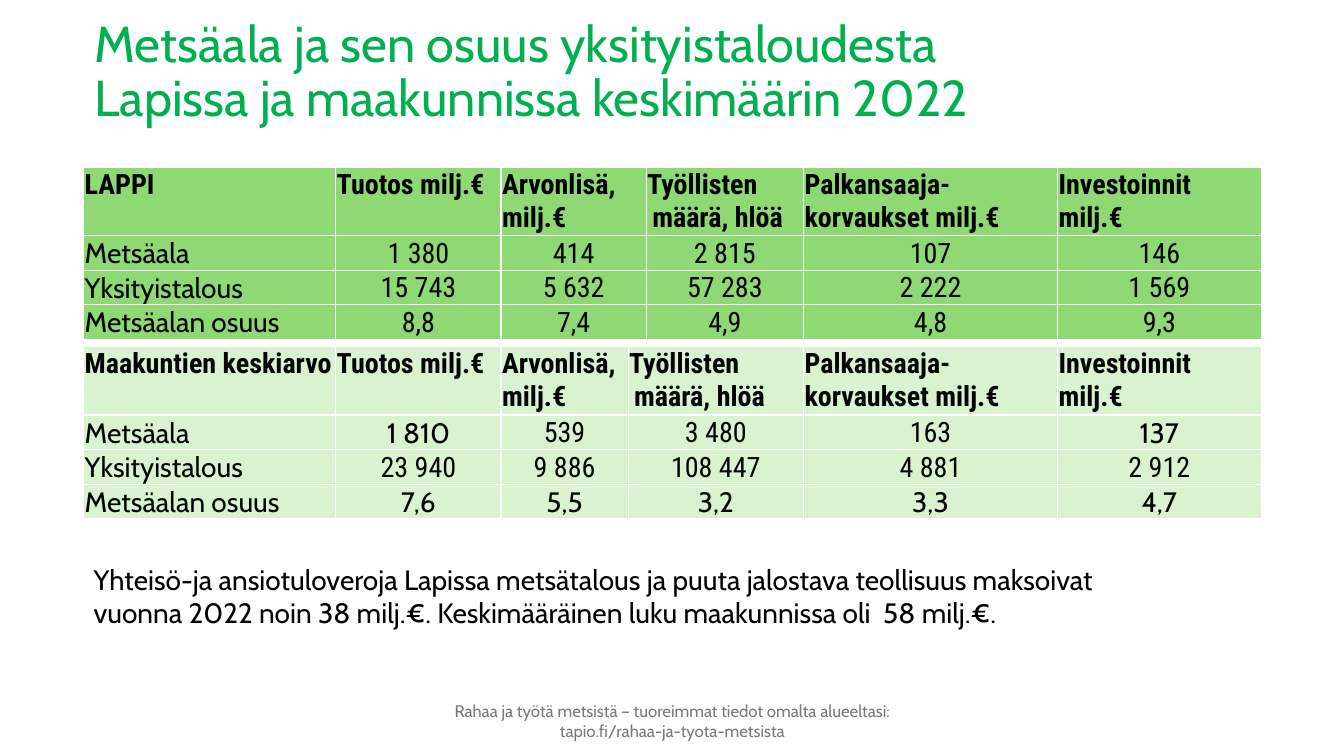
from dataclasses import dataclass

from lxml.etree import SubElement
from pptx import Presentation
from pptx.dml.color import RGBColor
from pptx.enum.text import MSO_ANCHOR, PP_ALIGN
from pptx.oxml.ns import qn
from pptx.slide import Slide
from pptx.table import _Cell
from pptx.text.text import TextFrame
from pptx.util import Emu, Pt


@dataclass(frozen=True)
class Theme:
    green: str = "00B050"
    lapland_fill: str = "8ED973"
    average_fill: str = "D9F2D0"
    border: str = "FFFFFF"
    ink: str = "000000"
    muted: str = "797979"
    body_font: str = "Cabin"
    figure_font: str = "Roboto Condensed"
    title_size: int = 36
    body_size: int = 20
    footer_size: int = 12


@dataclass(frozen=True)
class TextBlock:
    text: str
    left: int
    top: int
    width: int
    height: int
    size: int
    color: str
    align: PP_ALIGN = PP_ALIGN.LEFT
    anchor: MSO_ANCHOR = MSO_ANCHOR.MIDDLE
    line_spacing: float | None = None


@dataclass(frozen=True)
class RegionTable:
    region: str
    top: int
    fill: str
    column_widths: tuple[int, ...]
    figures: tuple[tuple[str, ...], ...]
    body_font_cells: frozenset[tuple[int, int]] = frozenset()


THEME = Theme()
EMU_PER_PX = 9144
TABLE_LEFT = 83
HEADER_HEIGHT = 65
ROW_HEIGHT = 34
HEADER_INDENT = 5
HEADINGS = (
    "Tuotos milj.€",
    "Arvonlisä, milj.€",
    "Työllisten\nmäärä, hlöä",
    "Palkansaaja-korvaukset milj.€",
    "Investoinnit\nmilj.€",
)
ROW_LABELS = ("Metsäala", "Yksityistalous", "Metsäalan osuus")

TABLES = (
    RegionTable(
        "LAPPI", 166, THEME.lapland_fill, (250, 164, 144, 156, 252, 202),
        (
            ("1 380", "414", "2 815", "107", "146"),
            ("15 743", "5 632", "57 283", "2 222", "1 569"),
            ("8,8", "7,4", "4,9", "4,8", "9,3"),
        ),
    ),
    RegionTable(
        "Maakuntien keskiarvo", 344, THEME.average_fill, (250, 164, 126, 174, 252, 202),
        (
            ("1 810", "539", "3 480", "163", "137"),
            ("23 940", "9 886", "108 447", "4 881", "2 912"),
            ("7,6", "5,5", "3,2", "3,3", "4,7"),
        ),
        frozenset({(1, 1), (1, 5)} | {(3, column) for column in range(1, 6)}),
    ),
)

TEXT_BLOCKS = (
    TextBlock(
        "Metsäala ja sen osuus yksityistaloudesta\vLapissa ja maakunnissa keskimäärin 2022",
        84, 0, 1219, 145, THEME.title_size, THEME.green, line_spacing=0.9,
    ),
    TextBlock(
        "Yhteisö-ja ansiotuloveroja Lapissa metsätalous ja puuta jalostava teollisuus maksoivat "
        "vuonna 2022 noin 38 milj.€. Keskimääräinen luku maakunnissa oli  58 milj.€.",
        83, 553, 1090, 77, THEME.body_size, THEME.ink, anchor=MSO_ANCHOR.TOP,
    ),
    TextBlock(
        "Rahaa ja työtä metsistä – tuoreimmat tiedot omalta alueeltasi: "
        "tapio.fi/rahaa-ja-tyota-metsista",
        432, 695, 470, 40, THEME.footer_size, THEME.muted, PP_ALIGN.CENTER,
    ),
)


def px(length: int) -> Emu:
    return Emu(length * EMU_PER_PX)


def write_text(
    frame: TextFrame,
    text: str,
    *,
    size: int = THEME.body_size,
    color: str = THEME.ink,
    font: str = THEME.body_font,
    bold: bool = False,
    align: PP_ALIGN = PP_ALIGN.LEFT,
    line_spacing: float | None = None,
) -> None:
    frame.word_wrap = True
    frame.text = text
    for para in frame.paragraphs:
        para.alignment = align
        if line_spacing is not None:
            para.line_spacing = line_spacing
        for span in para.runs:
            span.font.name = font
            span.font.size = Pt(size)
            span.font.bold = bold
            span.font.color.rgb = RGBColor.from_string(color)


def style_cell(cell: _Cell, fill: str, anchor: MSO_ANCHOR) -> None:
    cell.margin_left = cell.margin_right = cell.margin_top = px(1)
    cell.margin_bottom = 0
    cell.vertical_anchor = anchor
    properties = cell._tc.get_or_add_tcPr()
    for side in ("lnL", "lnR", "lnT", "lnB"):
        line = SubElement(properties, qn(f"a:{side}"), w=str(Pt(1)))
        solid = SubElement(line, qn("a:solidFill"))
        SubElement(solid, qn("a:srgbClr"), val=THEME.border)
    cell.fill.solid()
    cell.fill.fore_color.rgb = RGBColor.from_string(fill)


def draw_table(page: Slide, region: RegionTable) -> None:
    rows = (
        (region.region, *HEADINGS),
        *((label, *values) for label, values in zip(ROW_LABELS, region.figures)),
    )
    widths = region.column_widths
    height = HEADER_HEIGHT + ROW_HEIGHT * len(ROW_LABELS)
    table = page.shapes.add_table(
        len(rows), len(widths), px(TABLE_LEFT), px(region.top), px(sum(widths)), px(height)
    ).table
    table.first_row = table.horz_banding = False
    for column, width in zip(table.columns, widths):
        column.width = px(width)
    for row_index, texts in enumerate(rows):
        header = row_index == 0
        table.rows[row_index].height = px(HEADER_HEIGHT if header else ROW_HEIGHT)
        for column_index, text in enumerate(texts):
            cell = table.cell(row_index, column_index)
            label = not header and column_index == 0
            body_font = label or (row_index, column_index) in region.body_font_cells
            style_cell(cell, region.fill, MSO_ANCHOR.TOP if header else MSO_ANCHOR.BOTTOM)
            write_text(
                cell.text_frame, text, bold=header,
                font=THEME.body_font if body_font else THEME.figure_font,
                align=PP_ALIGN.LEFT if header or label else PP_ALIGN.CENTER,
            )
    workers = table.cell(0, 3).text_frame.paragraphs[1]
    workers._p.get_or_add_pPr().set("marL", str(px(HEADER_INDENT)))


def draw_text(page: Slide, block: TextBlock) -> None:
    box = page.shapes.add_textbox(
        px(block.left), px(block.top), px(block.width), px(block.height)
    )
    box.text_frame.vertical_anchor = block.anchor
    write_text(
        box.text_frame, block.text, size=block.size, color=block.color,
        align=block.align, line_spacing=block.line_spacing,
    )


def main() -> None:
    deck = Presentation()
    deck.slide_width, deck.slide_height = px(1333), px(750)
    page = deck.slides.add_slide(deck.slide_layouts[6])
    for block in TEXT_BLOCKS:
        draw_text(page, block)
    for region in TABLES:
        draw_table(page, region)
    deck.save("out.pptx")


if __name__ == "__main__":
    main()
